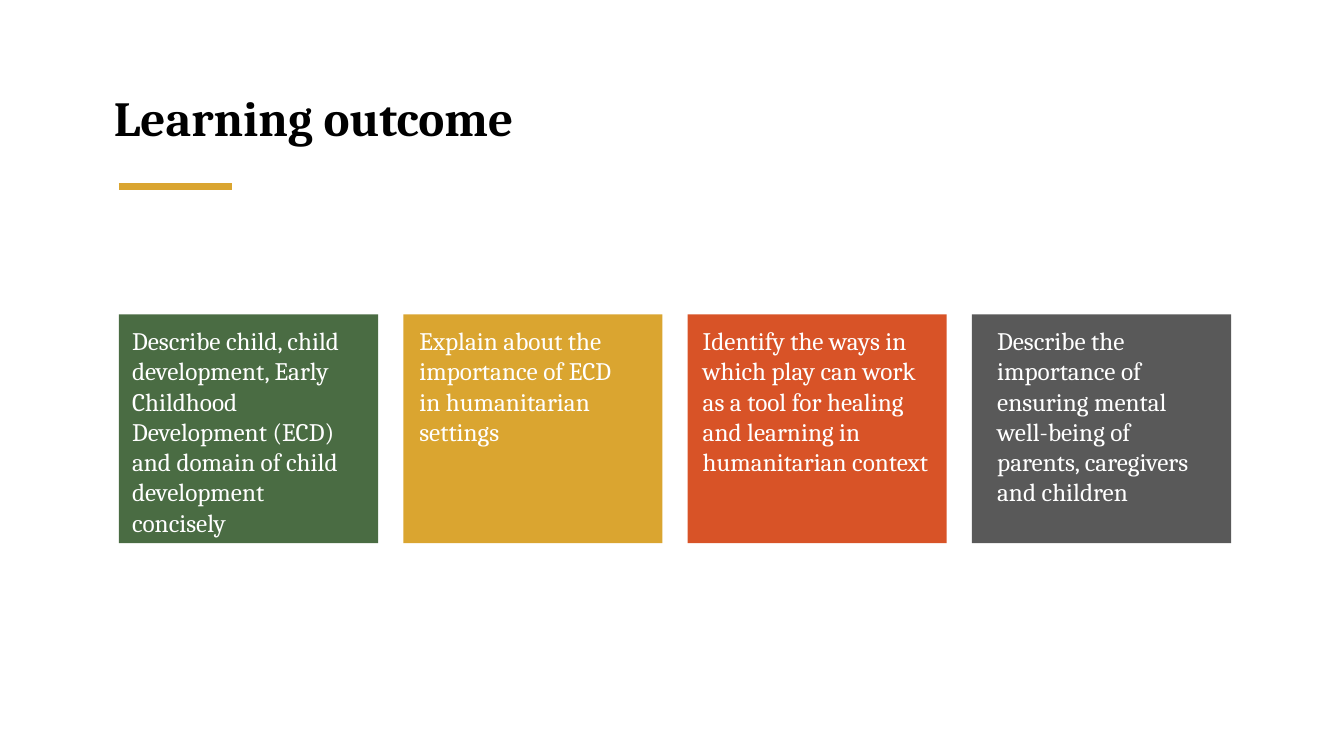
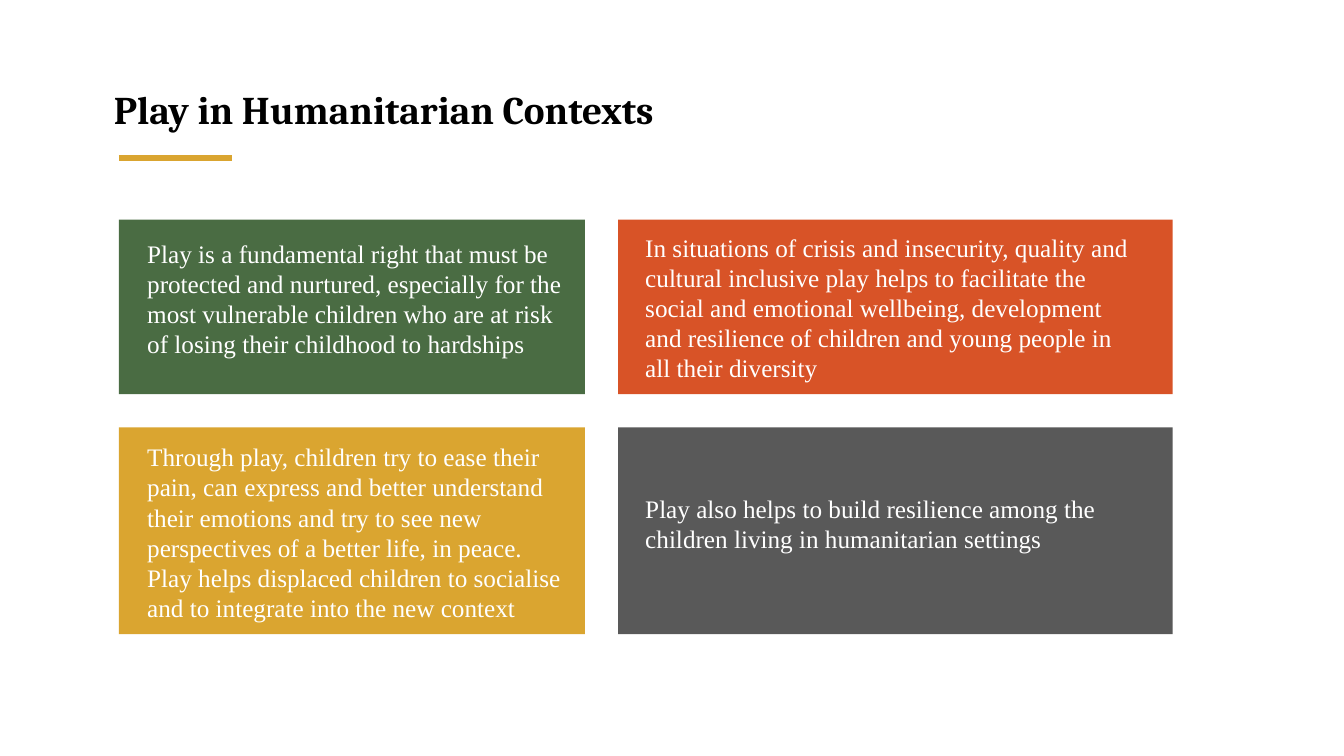
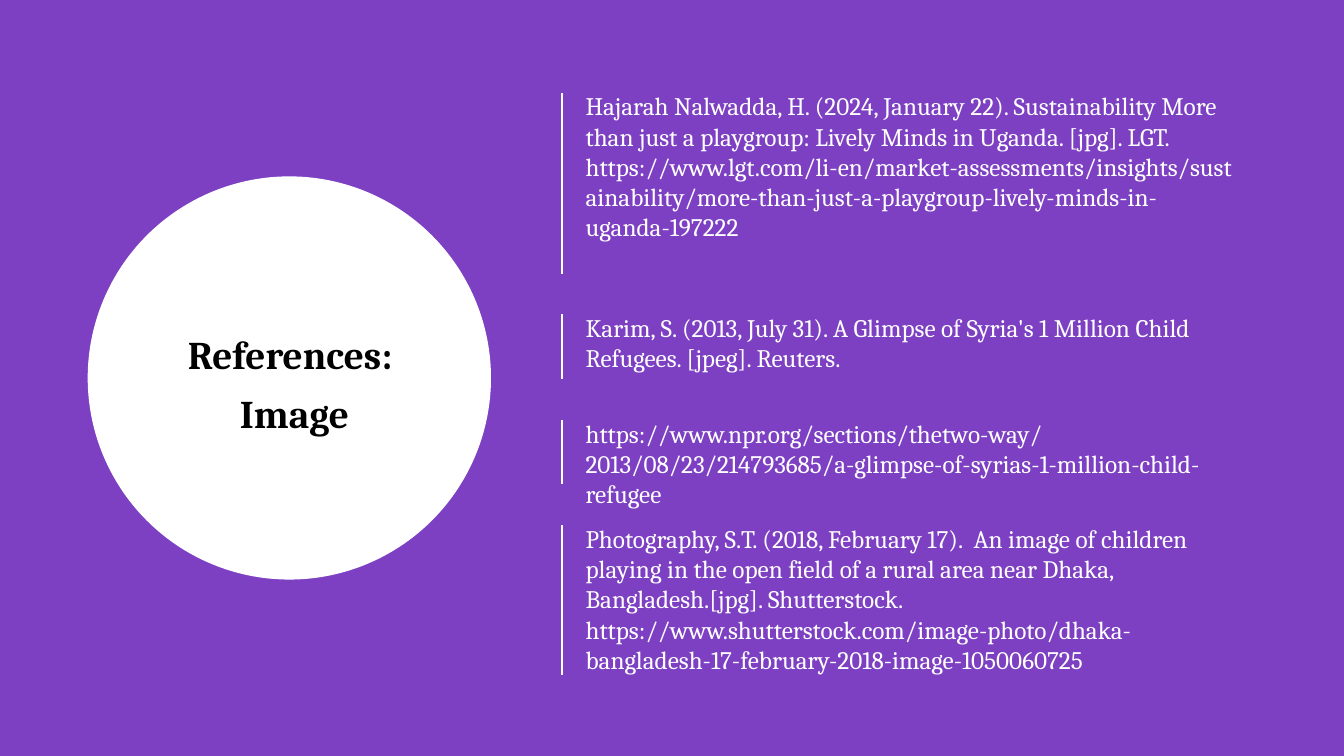
from lxml import etree
from pptx import Presentation
from pptx.dml.color import RGBColor
from pptx.enum import shapes, text
from pptx.oxml.ns import qn
from pptx.util import Inches, Pt

BLACK = RGBColor(0x00, 0x00, 0x00)
WHITE = RGBColor(0xFF, 0xFF, 0xFF)
GREEN = RGBColor(0x4A, 0x6C, 0x43)
GOLD = RGBColor(0xDA, 0xA5, 0x30)
RED = RGBColor(0xD8, 0x53, 0x27)
GREY = RGBColor(0x59, 0x59, 0x59)
PURPLE = RGBColor(0x7D, 0x40, 0xC3)
SERIF = "Cambria"
TIMES = "Times New Roman"
LEFT = 1.18

# wording, fill, left inset, right inset
GOALS = [
    ("Describe child, child development, Early Childhood Development (ECD) "
     "and domain of child development concisely", GREEN, 0.13, 0.16),
    ("Explain about the importance of ECD in humanitarian settings",
     GOLD, 0.16, 0.36),
    ("Identify the ways in which play can work as a tool for healing and "
     "learning in humanitarian context", RED, 0.15, 0.14),
    ("Describe the importance of ensuring mental well-being of parents, "
     "caregivers and children", GREY, 0.25, 0.18),
]

# rows of (wording, fill, top inset)
PLAY = [
    [("Play is a fundamental right that must be protected and nurtured, "
      "especially for the most vulnerable children who are at risk of losing "
      "their childhood to hardships", GREEN, 0.18),
     ("In situations of crisis and insecurity, quality and cultural inclusive "
      "play helps to facilitate the social and emotional wellbeing, "
      "development and resilience of children and young people in all their "
      "diversity", RED, 0.12)],
    [("Through play, children try to ease their pain, can express and better "
      "understand their emotions and try to see new perspectives of a better "
      "life, in peace. Play helps displaced children to socialise and to "
      "integrate into the new context", GOLD, 0.14),
     ("Play also helps to build resilience among the children living in "
      "humanitarian settings", GREY, 0.65)],
]
COLS = [(4.62, 0.28, 0.20), (5.5, 0.27, 0.29)]  # width, left and right inset
ROWS = [1.73, 2.05]
GAP = 0.33

# wording, top and height of the rule beside it
SOURCES = [
    ("Hajarah Nalwadda, H. (2024, January 22). Sustainability More than just "
     "a playgroup: Lively Minds in Uganda. [jpg]. LGT. "
     "https://www.lgt.com/li-en/market-assessments/insights/sustainability/"
     "more-than-just-a-playgroup-lively-minds-in-uganda-197222", 0.92, 1.8),
    ("Karim, S. (2013, July 31). A Glimpse of Syria's 1 Million Child "
     "Refugees. [jpeg]. Reuters.", 3.12, 0.64),
    ("https://www.npr.org/sections/thetwo-way/2013/08/23/214793685/"
     "a-glimpse-of-syrias-1-million-child-refugee", 4.17, 0.63),
    ("Photography, S.T. (2018, February 17).  An image of children playing in "
     "the open field of a rural area near Dhaka, Bangladesh.[jpg]. "
     "Shutterstock. https://www.shutterstock.com/image-photo/"
     "dhaka-bangladesh-17-february-2018-image-1050060725", 5.21, 1.49),
]


def write(shape, words, size, color, face=SERIF, bold=False,
          align=text.PP_ALIGN.LEFT):
    frame = shape.text_frame
    frame.text = words
    frame.word_wrap = True
    frame.auto_size = text.MSO_AUTO_SIZE.NONE
    frame.vertical_anchor = text.MSO_ANCHOR.TOP
    for para in frame.paragraphs:
        para.alignment = align
        for run in para.runs:
            font = run.font
            font.name, font.size, font.bold = face, Pt(size), bold
            font.color.rgb = color
    return frame


def start(deck, words, box, size, align=text.PP_ALIGN.LEFT):
    """Add a title-only slide with its title placed in box."""
    slide = deck.slides.add_slide(deck.slide_layouts[5])
    title = slide.shapes.title
    title.left, title.top, title.width, title.height = map(Inches, box)
    write(title, words, size, BLACK, bold=True, align=align)
    return slide


def rule(slide, x, y, wide, high, color, weight):
    line = slide.shapes.add_connector(
        shapes.MSO_CONNECTOR.STRAIGHT,
        *map(Inches, (x, y, x + wide, y + high)))
    line.line.color.rgb = color
    line.line.width = Pt(weight)
    etree.SubElement(line._element.spPr, qn("a:effectLst"))


def accent(slide, y):
    rule(slide, LEFT, y, 1.12, 0, GOLD, 4.5)


def block(slide, kind, box, fill):
    shape = slide.shapes.add_shape(kind, *map(Inches, box))
    shape.shadow.inherit = False
    shape.fill.solid()
    shape.fill.fore_color.rgb = fill
    shape.line.fill.background()
    return shape


def card(slide, box, fill, words, face, insets):
    """Add a filled rectangle with text; insets are left, top, right."""
    shape = block(slide, shapes.MSO_SHAPE.RECTANGLE, box, fill)
    frame = write(shape, words, 18, WHITE, face)
    frame.margin_left, frame.margin_top, frame.margin_right = map(Inches, insets)
    frame.margin_bottom = 0


def goals(deck):
    slide = start(deck, "Learning outcome", (1.03, 0.82, 6.67, 0.69), 35)
    accent(slide, 1.85)
    wide, step = 2.57, 2.82
    for i, (words, fill, left, right) in enumerate(GOALS):
        card(slide, (LEFT + i * step, 3.12, wide, 2.27), fill, words, SERIF,
             (left, 0.11, right))


def play(deck):
    slide = start(deck, "Play in Humanitarian Contexts",
                  (1.03, 0.8, 10.74, 0.57), 28)
    accent(slide, 1.57)
    y = 2.18
    for high, row in zip(ROWS, PLAY):
        x = LEFT
        for (wide, left, right), (words, fill, top) in zip(COLS, row):
            card(slide, (x, y, wide, high), fill, words, TIMES,
                 (left, top, right))
            x += wide + GAP
        y += high + GAP


def sources(deck):
    slide = start(deck, "References: \nImage", (0.87, 3.23, 4.1, 1.16), 28,
                  text.PP_ALIGN.CENTER)
    slide.background.fill.solid()
    slide.background.fill.fore_color.rgb = PURPLE
    title = slide.shapes.title
    title.text_frame.paragraphs[1].space_before = Pt(8)
    disc = block(slide, shapes.MSO_SHAPE.OVAL, (0.87, 1.75, 4, 4), WHITE)
    title._element.addprevious(disc._element)
    for words, top, high in SOURCES:
        rule(slide, 5.57, top, 0, high, WHITE, 1.5)
        note = slide.shapes.add_textbox(
            *map(Inches, (5.71, top - 0.07, 6.67, high + 0.12)))
        write(note, words, 18, WHITE)


def main():
    deck = Presentation()
    deck.slide_width, deck.slide_height = Inches(13.33), Inches(7.5)
    for build in (goals, play, sources):
        build(deck)
    deck.save("out.pptx")


if __name__ == "__main__":
    main()
